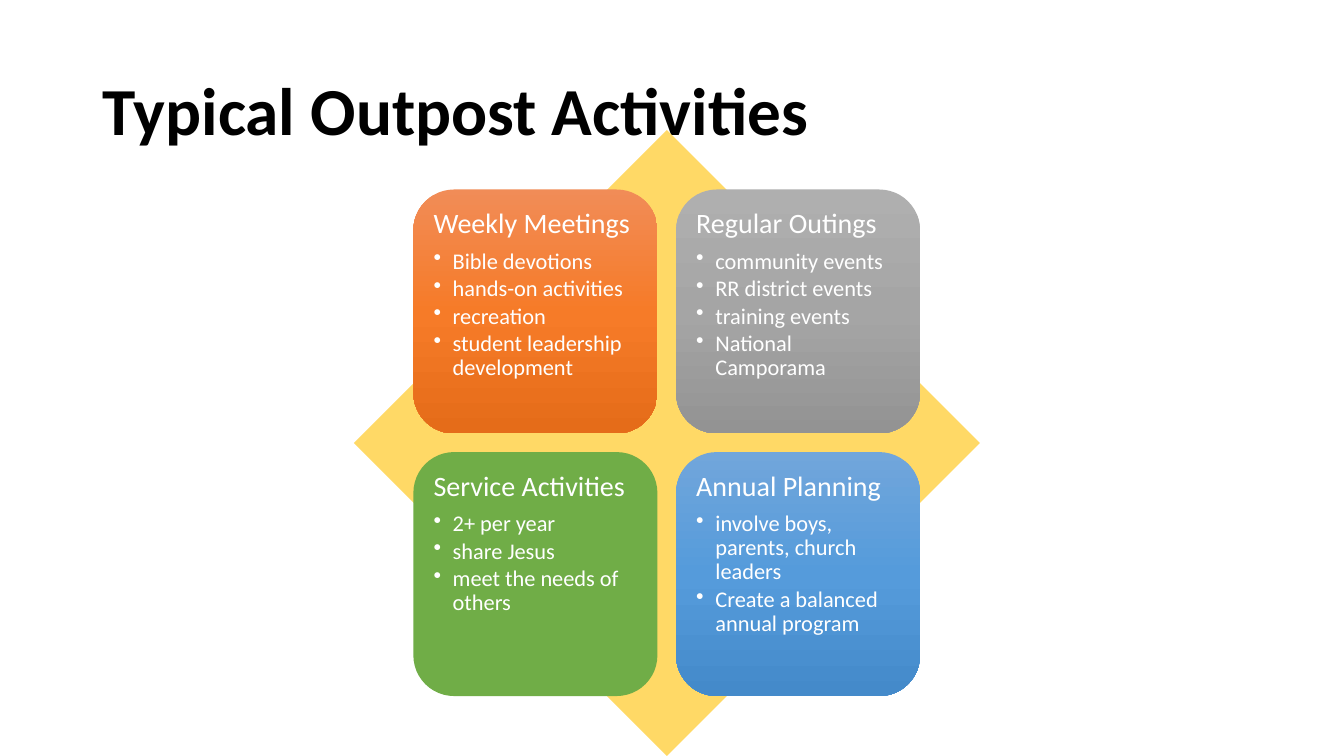
"""Build the Typical Outpost Activities slide: four cards over a diamond."""
from copy import deepcopy

from pptx import Presentation
from pptx.dml.color import RGBColor
from pptx.enum.shapes import MSO_SHAPE
from pptx.enum.text import MSO_ANCHOR
from pptx.oxml.ns import qn
from pptx.util import Inches, Pt

DIAMOND = MSO_SHAPE.DIAMOND
ROUND = MSO_SHAPE.ROUNDED_RECTANGLE
MIDDLE = MSO_ANCHOR.MIDDLE
FONT = "Calibri"
COLORS = {
    "black": "000000",
    "white": "FFFFFF",
    "gold": "FFD966",
    "orange": ["F18C57", "F67B28", "E56C19"],
    "gray": ["AFAFAF", "A5A5A5", "939393"],
    "green": ["70AD47"],
    "blue": ["71A6DB", "559BDB", "448ACA"],
}
CARDS = [
    ("Weekly Meetings", "orange",
     ["Bible devotions", "hands-on activities", "recreation",
      "student leadership development"]),
    ("Regular Outings", "gray",
     ["community events", "RR district events", "training events",
      "National Camporama"]),
    ("Service Activities", "green",
     ["2+ per year", "share Jesus", "meet the needs of others"]),
    ("Annual Planning", "blue",
     ["involve boys, parents, church leaders",
      "Create a balanced annual program"]),
]
LEFT, TOP, SIZE, STEP = 4.1, 1.88, 2.42, 2.605
PAD, INSET, INDENT = 0.12, Inches(0.08), Inches(0.19)


def add_shape(kind, left, top, size, shades):
    """Add a square shape with a plain fill or a three-stop gradient."""
    shape = slide.shapes.add_shape(
        kind, Inches(left), Inches(top), Inches(size), Inches(size))
    shape.shadow.inherit = False
    shape.line.fill.background()
    if len(shades) == 1:
        shape.fill.solid()
        shape.fill.fore_color.rgb = RGBColor.from_string(shades[0])
        return
    shape.fill.gradient()
    shape.fill.gradient_angle = 270
    stops = shape._element.spPr.find(qn("a:gradFill")).find(qn("a:gsLst"))
    stops.insert(1, deepcopy(stops[0]))
    for i, stop in enumerate(shape.fill.gradient_stops):
        stop.position = i / 2
        stop.color.rgb = RGBColor.from_string(shades[i])


def add_text(para, text, size, color, bold=False):
    """Add one run of text to a paragraph."""
    para.line_spacing = 0.9
    run = para.add_run()
    run.text = text
    run.font.name = FONT
    run.font.size = Pt(size)
    run.font.bold = bold
    run.font.color.rgb = RGBColor.from_string(COLORS[color])


prs = Presentation()
prs.slide_width, prs.slide_height = Inches(13.33), Inches(7.5)
slide = prs.slides.add_slide(prs.slide_layouts[6])

title = slide.shapes.add_textbox(
    Inches(0.92), Inches(0.4), Inches(11.5), Inches(1.45)).text_frame
title.word_wrap = True
title.vertical_anchor = MIDDLE
add_text(title.paragraphs[0], "Typical Outpost Activities", 48, "black", True)

add_shape(DIAMOND, 3.51, 1.29, 6.21, [COLORS["gold"]])

for n, (head, color, items) in enumerate(CARDS):
    row, col = divmod(n, 2)
    left, top = LEFT + col * STEP, TOP + row * STEP
    add_shape(ROUND, left, top, SIZE, COLORS[color])

    side = Inches(SIZE - 2 * PAD)
    frame = slide.shapes.add_textbox(
        Inches(left + PAD), Inches(top + PAD), side, side).text_frame
    frame.word_wrap = True
    frame.margin_left = frame.margin_right = INSET
    frame.margin_top = frame.margin_bottom = INSET

    para = frame.paragraphs[0]
    para.space_after = Pt(7)
    add_text(para, head, 20, "white")
    for item in items:
        para = frame.add_paragraph()
        para.level = 1
        para.space_after = Pt(2.4)
        props = para._p.get_or_add_pPr()
        props.set("marL", str(INDENT))
        props.set("indent", str(-INDENT))
        bullet = props.makeelement(qn("a:buChar"), {"char": "•"})
        props.append(bullet)
        add_text(para, item, 16, "white")

prs.save("out.pptx")
